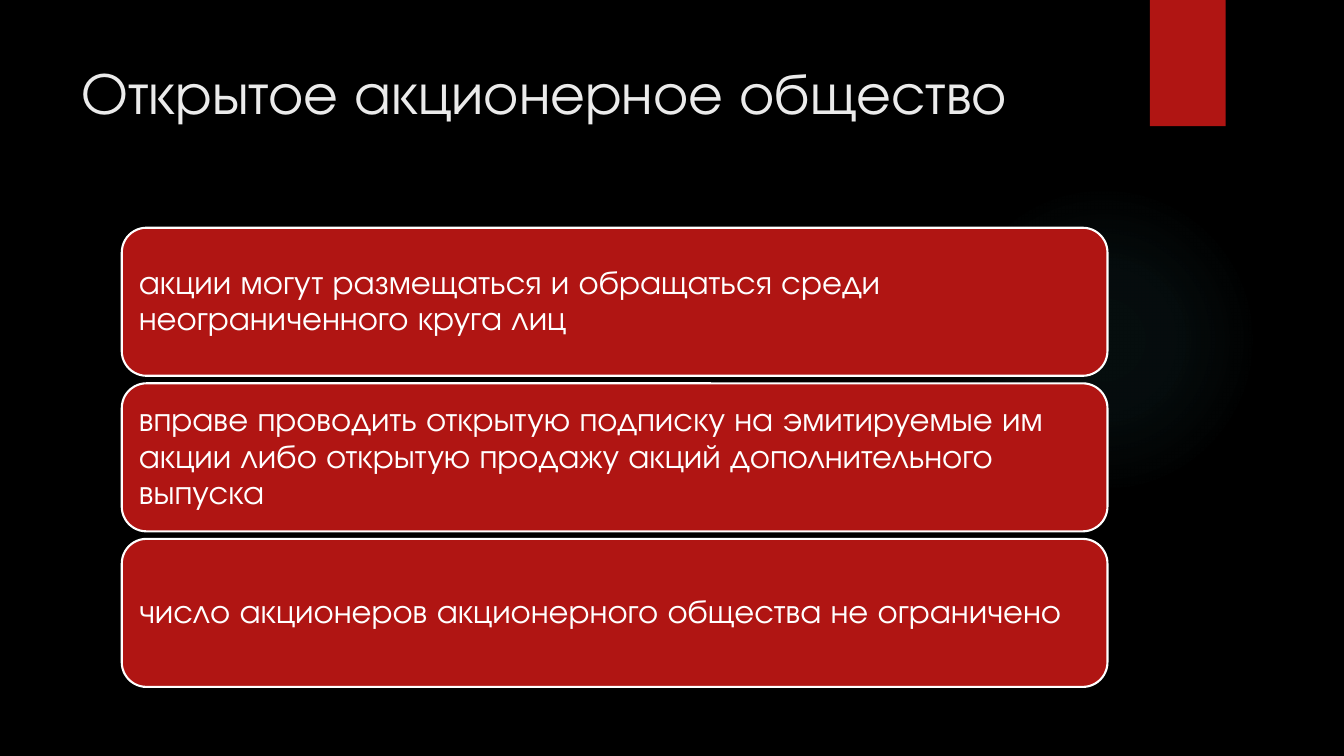
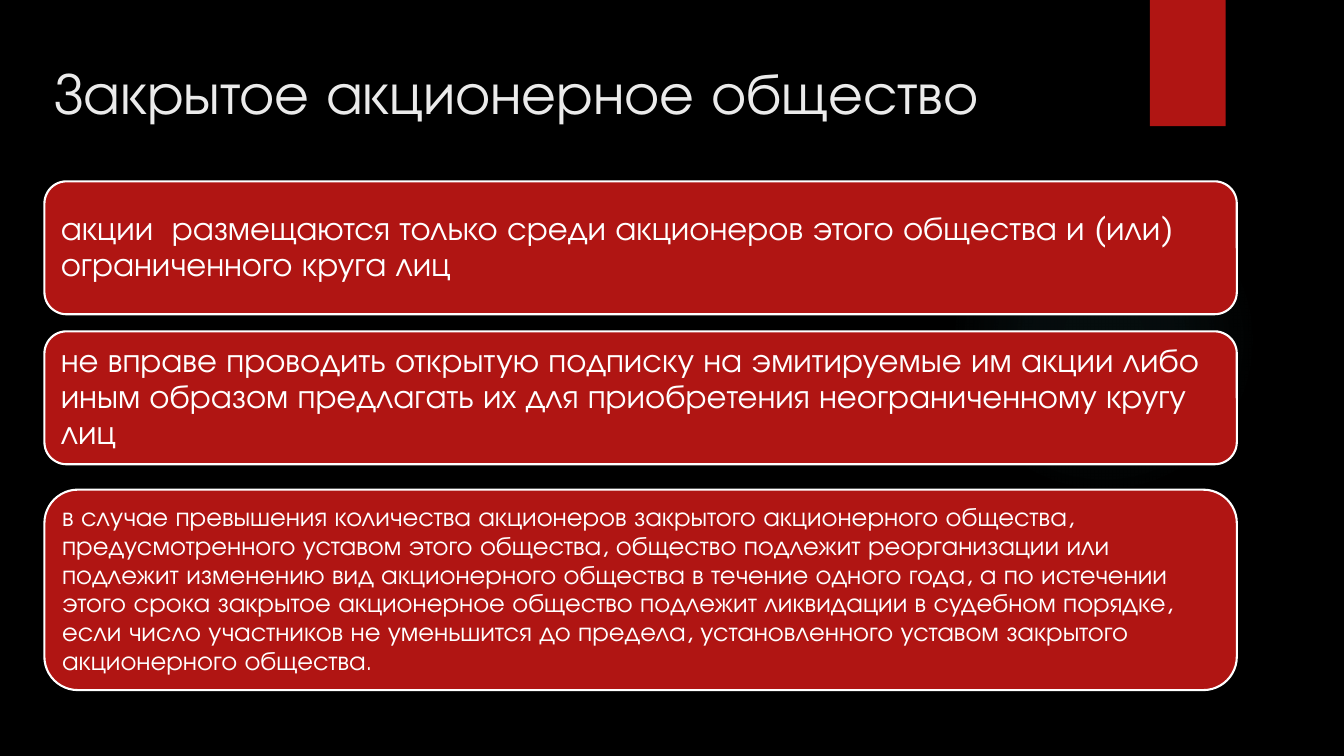
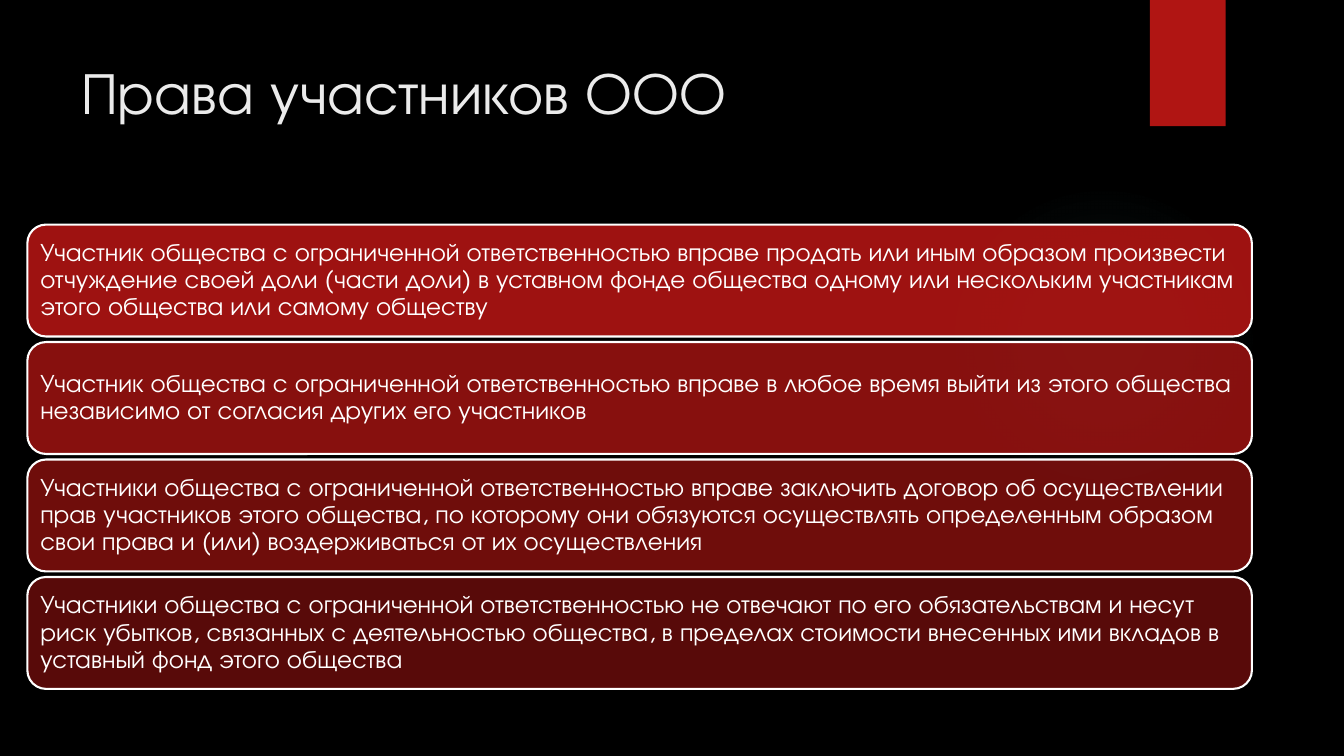
import pptx
import pptx.dml.color
import pptx.enum.shapes
import pptx.enum.text
import pptx.oxml
import pptx.oxml.ns
import pptx.util

Cm = pptx.util.Cm
Pt = pptx.util.Pt
RGBColor = pptx.dml.color.RGBColor
MSO_SHAPE = pptx.enum.shapes.MSO_SHAPE
MSO_ANCHOR = pptx.enum.text.MSO_ANCHOR
PP_ALIGN = pptx.enum.text.PP_ALIGN

BLACK = RGBColor(0x00, 0x00, 0x00)
RED = RGBColor(0xB0, 0x15, 0x13)
WHITE = RGBColor(0xFF, 0xFF, 0xFF)
TITLE_GREY = RGBColor(0xEB, 0xEB, 0xEB)
GLOW = RGBColor(0x50, 0xB9, 0xC1)
GLOW_STOPS = [(0, 7), (36, 6), (69, 0)]  # position and opacity, percent
FONT = "TeX Gyre Adventor"
BLANK_LAYOUT = 6

OPEN_COMPANY = [
    "акции могут размещаться и обращаться среди неограниченного круга лиц",
    "вправе проводить открытую подписку на эмитируемые им акции либо открытую "
    "продажу акций дополнительного выпуска",
    "число акционеров акционерного общества не ограничено",
]
CLOSED_COMPANY = [
    "акции  размещаются только среди акционеров этого общества и (или) "
    "ограниченного круга лиц",
    "не вправе проводить открытую подписку на эмитируемые им акции либо иным "
    "образом предлагать их для приобретения неограниченному кругу лиц",
]
CLOSED_COMPANY_LIMIT = (
    "в случае превышения количества акционеров закрытого акционерного общества, "
    "предусмотренного уставом этого общества, общество подлежит реорганизации "
    "или подлежит изменению вид акционерного общества в течение одного года, "
    "а по истечении этого срока закрытое акционерное общество подлежит "
    "ликвидации в судебном порядке, если число участников не уменьшится до "
    "предела, установленного уставом закрытого акционерного общества"
)
MEMBER_RIGHTS = [
    "Участник общества с ограниченной ответственностью вправе продать или иным "
    "образом произвести отчуждение своей доли (части доли) в уставном фонде "
    "общества одному или нескольким участникам этого общества или самому обществу",
    "Участник общества с ограниченной ответственностью вправе в любое время "
    "выйти из этого общества независимо от согласия других его участников",
    "Участники общества с ограниченной ответственностью вправе заключить договор "
    "об осуществлении прав участников этого общества, по которому они обязуются "
    "осуществлять определенным образом свои права и (или) воздерживаться от их "
    "осуществления",
    "Участники общества с ограниченной ответственностью не отвечают по его "
    "обязательствам и несут риск убытков, связанных с деятельностью общества, "
    "в пределах стоимости внесенных ими вкладов в уставный фонд этого общества",
]


def format_run(r, size, color):
    r.font.name = FONT
    r.font.size = Pt(size)
    r.font.color.rgb = color


def add_filled(slide, kind, left, top, width, height, color):
    sp = slide.shapes.add_shape(kind, Cm(left), Cm(top), Cm(width), Cm(height))
    sp.shadow.inherit = False
    sp.fill.solid()
    sp.fill.fore_color.rgb = color
    sp.line.fill.background()
    return sp


def set_opacity(sp, percent):
    color = sp.fill._xPr.find(".//" + pptx.oxml.ns.qn("a:srgbClr"))
    alpha = pptx.oxml.parse_xml(
        f'<a:alpha {pptx.oxml.ns.nsdecls("a")} val="{round(percent * 1000)}"/>')
    color.append(alpha)


def add_glow(slide):
    """Faint circle of light that fades out towards its edge."""
    sp = add_filled(slide, MSO_SHAPE.OVAL, 23.9, 4.65, 7.82, 7.82, GLOW)
    stops = "".join(
        f'<a:gs pos="{pos * 1000}"><a:srgbClr val="{GLOW}">'
        f'<a:alpha val="{alpha * 1000}"/></a:srgbClr></a:gs>'
        for pos, alpha in GLOW_STOPS)
    grad = pptx.oxml.parse_xml(
        f'<a:gradFill {pptx.oxml.ns.nsdecls("a")}><a:gsLst>{stops}</a:gsLst>'
        '<a:path path="circle"><a:fillToRect l="50000" t="50000" r="50000" '
        'b="50000"/></a:path></a:gradFill>')
    spPr = sp._element.spPr
    spPr.replace(spPr.find(pptx.oxml.ns.qn("a:solidFill")), grad)


def add_title(slide, text, left, width):
    sp = slide.shapes.add_textbox(Cm(left), Cm(1.27), Cm(width), Cm(3.3))
    tf = sp.text_frame
    tf.word_wrap = True
    tf.text = text
    format_run(tf.paragraphs[0].runs[0], 42, TITLE_GREY)


def new_slide(prs, title, left, width):
    slide = prs.slides.add_slide(prs.slide_layouts[BLANK_LAYOUT])
    add_glow(slide)
    add_filled(slide, MSO_SHAPE.RECTANGLE, 28.98, 0, 1.91, 3.18, RED)
    add_title(slide, title, left, width)
    return slide


def add_card(slide, text, left, top, width, height, size, inset):
    sp = add_filled(slide, MSO_SHAPE.ROUNDED_RECTANGLE,
                    left, top, width, height, RED)
    sp.line.color.rgb = WHITE
    sp.line.width = Pt(1.5)
    tf = sp.text_frame
    tf.word_wrap = True
    tf.vertical_anchor = MSO_ANCHOR.MIDDLE
    tf.margin_left = tf.margin_right = Cm(inset)
    tf.margin_top = tf.margin_bottom = Cm(inset)
    tf.text = text
    p = tf.paragraphs[0]
    p.alignment = PP_ALIGN.LEFT
    p.line_spacing = 0.9
    format_run(p.runs[0], size, WHITE)
    return sp


def add_card_stack(slide, texts, left, top, width, height, gap, size, inset):
    return [add_card(slide, text, left, top + i * (height + gap), width, height,
                     size, inset)
            for i, text in enumerate(texts)]


def build_open_company(prs):
    slide = new_slide(prs, "Открытое акционерное общество", 1.8, 28.68)
    add_card_stack(slide, OPEN_COMPANY, left=3.07, top=5.74, width=24.84,
                   height=3.73, gap=0.19, size=24, inset=0.25)


def build_closed_company(prs):
    slide = new_slide(prs, "Закрытое акционерное общество", 1.12, 27.58)
    left, width = 1.12, 30.05
    add_card_stack(slide, CLOSED_COMPANY, left, top=4.57, width=width,
                   height=3.35, gap=0.43, size=24, inset=0.25)
    limit = add_card(slide, CLOSED_COMPANY_LIMIT, left, top=12.34, width=width,
                     height=5.05, size=19, inset=0.2)
    full_stop = limit.text_frame.paragraphs[0].add_run()
    full_stop.text = "."
    format_run(full_stop, 16, WHITE)


def build_member_rights(prs):
    slide = new_slide(prs, "Права участников ООО", 1.8, 26.14)
    cards = add_card_stack(slide, MEMBER_RIGHTS, left=0.69, top=5.66, width=30.86,
                           height=2.82, gap=0.14, size=18, inset=0.19)
    for i, card in enumerate(cards):
        set_opacity(card, 90 - 40 * i / (len(cards) - 1))


def main():
    prs = pptx.Presentation()
    prs.slide_width = Cm(33.87)
    prs.slide_height = Cm(19.05)
    background = prs.slide_master.background.fill
    background.solid()
    background.fore_color.rgb = BLACK
    build_open_company(prs)
    build_closed_company(prs)
    build_member_rights(prs)
    prs.save("out.pptx")


if __name__ == "__main__":
    main()
